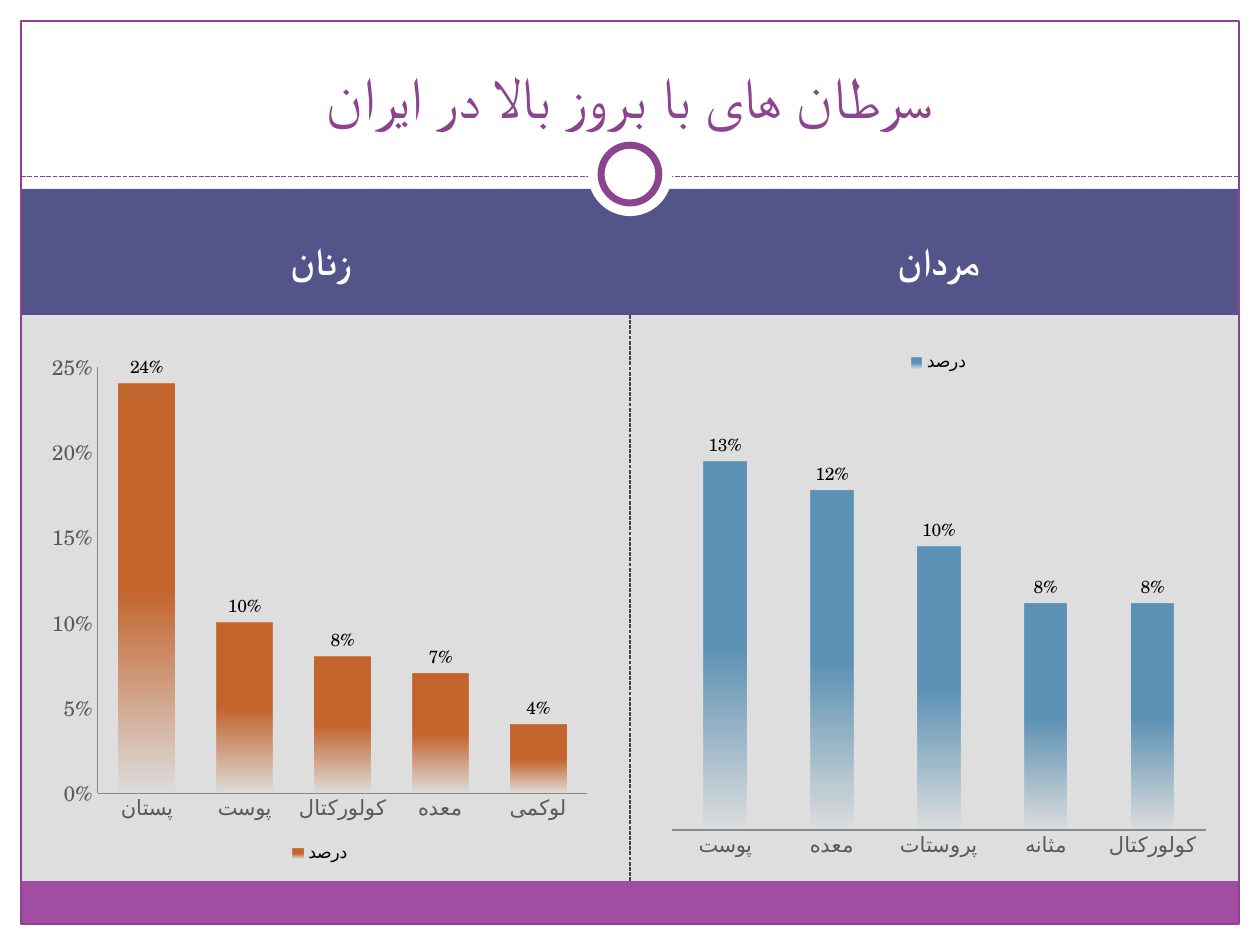
from lxml import etree
from pptx import Presentation
from pptx.chart.data import CategoryChartData
from pptx.dml.color import RGBColor
from pptx.enum import chart as chart_enum, dml, shapes, text
from pptx.oxml import parse_xml
from pptx.oxml.ns import nsdecls, qn
from pptx.util import Pt

FONT = "TeX Gyre Schola"
WHITE = RGBColor(0xFF, 0xFF, 0xFF)
BLACK = RGBColor(0, 0, 0)
PAGE = RGBColor(0xDE, 0xDE, 0xDE)
INDIGO = RGBColor(0x53, 0x54, 0x8A)
SLATE = RGBColor(0x42, 0x44, 0x56)
PURPLE = RGBColor(0x8D, 0x44, 0x90)
VIOLET = RGBColor(0xA0, 0x4D, 0xA3)
AXIS_TEXT = RGBColor(0x59, 0x59, 0x59)
AXIS_LINE = RGBColor(0x89, 0x89, 0x89)
ORANGE = RGBColor(0xC4, 0x65, 0x2D)
BLUE = RGBColor(0x5C, 0x92, 0xB5)

TITLE = "سرطان های با بروز بالا در ایران"
SERIES_NAME = "درصد"
LEGEND = chart_enum.XL_LEGEND_POSITION

# plot: x, y, width and height as fractions of the chart
PANELS = [
    {"heading": "زنان", "placeholder": 1, "left": 24, "color": ORANGE,
     "data": [("پستان", 0.24), ("پوست", 0.10), ("کولورکتال", 0.08),
              ("معده", 0.07), ("لوکمی", 0.04)],
     "gap": 75, "maximum": 0.25, "step": 0.05, "show_axis": True,
     "legend": LEGEND.BOTTOM, "plot": (0.10, 0.05, 0.88, 0.81)},
    {"heading": "مردان", "placeholder": 3, "left": 377.5, "color": BLUE,
     "data": [("پوست", 0.13), ("معده", 0.12), ("پروستات", 0.10),
              ("مثانه", 0.08), ("کولورکتال", 0.08)],
     "gap": 150, "maximum": 0.16, "step": 0.02, "show_axis": False,
     "legend": LEGEND.TOP, "plot": (0.02, 0.07, 0.96, 0.86)},
]
PANEL_WIDTH = 318

# left, top, width, height, fill
BANDS = [
    (0, 0, 720, 114, WHITE),
    (0, 528, 720, 12, WHITE),
    (0, 0, 12, 540, WHITE),
    (708, 0, 12, 540, WHITE),
    (12, 108, 696, 72, INDIGO),
    (12, 503.5, 696, 24.5, VIOLET),
]


def add_figure(slide, kind, box, fill=None, line=None, width=0.75):
    shape = slide.shapes.add_shape(kind, *map(Pt, box))
    shape.shadow.inherit = False
    if fill is None:
        shape.fill.background()
    else:
        shape.fill.solid()
        shape.fill.fore_color.rgb = fill
    if line is None:
        shape.line.fill.background()
    else:
        shape.line.color.rgb = line
        shape.line.width = Pt(width)


def add_dashed_line(slide, ends, color, width):
    line = slide.shapes.add_connector(shapes.MSO_CONNECTOR.STRAIGHT, *map(Pt, ends))
    line.line.color.rgb = color
    line.line.width = Pt(width)
    line.line.dash_style = dml.MSO_LINE.SQUARE_DOT
    etree.SubElement(line._element.spPr, qn("a:effectLst"))


def set_font(font, size, color, bold=False):
    font.name = FONT
    font.size = Pt(size)
    font.color.rgb = color
    font.bold = bold


def fill_placeholder(shape, content, box, size, color, anchor, bold=False):
    shape.left, shape.top, shape.width, shape.height = map(Pt, box)
    frame = shape.text_frame
    frame.text = content
    frame.auto_size = text.MSO_AUTO_SIZE.NONE
    frame.vertical_anchor = anchor
    paragraph = frame.paragraphs[0]
    paragraph.alignment = text.PP_ALIGN.CENTER
    set_font(paragraph.runs[0].font, size, color, bold)
    # Bring the text in front of the bands
    shape._element.getparent().append(shape._element)
    return paragraph


def fade_fill(series, color):
    """Fill the bars solid to half height, then fade to transparent."""
    properties = series.format.fill._xPr
    properties.insert(0, parse_xml(
        f'<a:gradFill {nsdecls("a")} rotWithShape="1"><a:gsLst>'
        f'<a:gs pos="50000"><a:srgbClr val="{color}"/></a:gs>'
        f'<a:gs pos="100000"><a:srgbClr val="{color}"><a:alpha val="0"/></a:srgbClr></a:gs>'
        '</a:gsLst><a:lin ang="5400000" scaled="0"/></a:gradFill>'))


def set_plot_area(chart, plot):
    settings = '<c:layoutTarget val="inner"/><c:xMode val="edge"/><c:yMode val="edge"/>'
    settings += "".join(f'<c:{name} val="{value}"/>' for name, value in zip("xywh", plot))
    area = chart._chartSpace.find(".//" + qn("c:plotArea"))
    for layout in area.findall(qn("c:layout")):
        area.remove(layout)
    area.insert(0, parse_xml(
        f'<c:layout {nsdecls("c")}><c:manualLayout>{settings}</c:manualLayout></c:layout>'))


def add_bar_chart(slide, panel):
    data = CategoryChartData(number_format="0%")
    data.categories = [name for name, _ in panel["data"]]
    data.add_series(SERIES_NAME, [value for _, value in panel["data"]])
    box = (panel["left"], 194.5, PANEL_WIDTH, 301)
    chart = slide.shapes.add_chart(
        chart_enum.XL_CHART_TYPE.COLUMN_CLUSTERED, *map(Pt, box), data).chart
    chart.has_title = False
    set_font(chart.font, 10, BLACK)
    chart.has_legend = True
    chart.legend.position = panel["legend"]
    chart.legend.include_in_layout = False

    for axis in (chart.category_axis, chart.value_axis):
        axis.has_major_gridlines = False
        axis.major_tick_mark = chart_enum.XL_TICK_MARK.NONE
        axis.format.line.color.rgb = AXIS_LINE
        axis.format.line.width = Pt(0.75)
        set_font(axis.tick_labels.font, 12, AXIS_TEXT)
    values = chart.value_axis
    values.minimum_scale, values.maximum_scale = 0, panel["maximum"]
    values.major_unit = panel["step"]
    values.tick_labels.number_format = "0%"
    values.tick_labels.number_format_is_linked = False
    values.visible = panel["show_axis"]

    plot = chart.plots[0]
    plot.vary_by_categories = False
    plot.gap_width = panel["gap"]
    plot.has_data_labels = True
    labels = plot.data_labels
    labels.show_value = True
    labels.number_format = "0%"
    labels.number_format_is_linked = False
    labels.position = chart_enum.XL_LABEL_POSITION.OUTSIDE_END
    set_font(labels.font, 10, BLACK)
    fade_fill(plot.series[0], panel["color"])
    set_plot_area(chart, panel["plot"])


def main():
    presentation = Presentation()
    presentation.slide_width, presentation.slide_height = Pt(720), Pt(540)
    slide = presentation.slides.add_slide(presentation.slide_layouts[4])
    slide.background.fill.solid()
    slide.background.fill.fore_color.rgb = PAGE
    placeholders = {shape.placeholder_format.idx: shape for shape in slide.placeholders}

    rectangle, oval = shapes.MSO_SHAPE.RECTANGLE, shapes.MSO_SHAPE.OVAL
    add_dashed_line(slide, (360, 503.5, 360, 173.5), SLATE, 0.75)
    for *box, fill in BANDS:
        add_figure(slide, rectangle, box, fill)
    add_dashed_line(slide, (12, 100.8, 708, 100.8), PURPLE, 0.9)
    add_figure(slide, rectangle, (12, 12, 696, 516), line=PURPLE)
    add_figure(slide, oval, (336, 75.5, 48, 48), WHITE)
    add_figure(slide, oval, (343.5, 83, 33, 33), WHITE, PURPLE, 4)

    title = fill_placeholder(slide.shapes.title, TITLE, (24, 18, 672, 60), 33, PURPLE,
                             text.MSO_ANCHOR.BOTTOM)
    title._p.get_or_add_pPr().set("rtl", "1")
    for panel in PANELS:
        index = panel["placeholder"]
        fill_placeholder(placeholders[index], panel["heading"],
                         (panel["left"], 120, PANEL_WIDTH, 57.5), 22, WHITE,
                         text.MSO_ANCHOR.MIDDLE, bold=True)
        add_bar_chart(slide, panel)

    for shape in list(slide.placeholders):
        if not shape.text_frame.text:
            shape._element.getparent().remove(shape._element)
    presentation.save("out.pptx")


if __name__ == "__main__":
    main()
